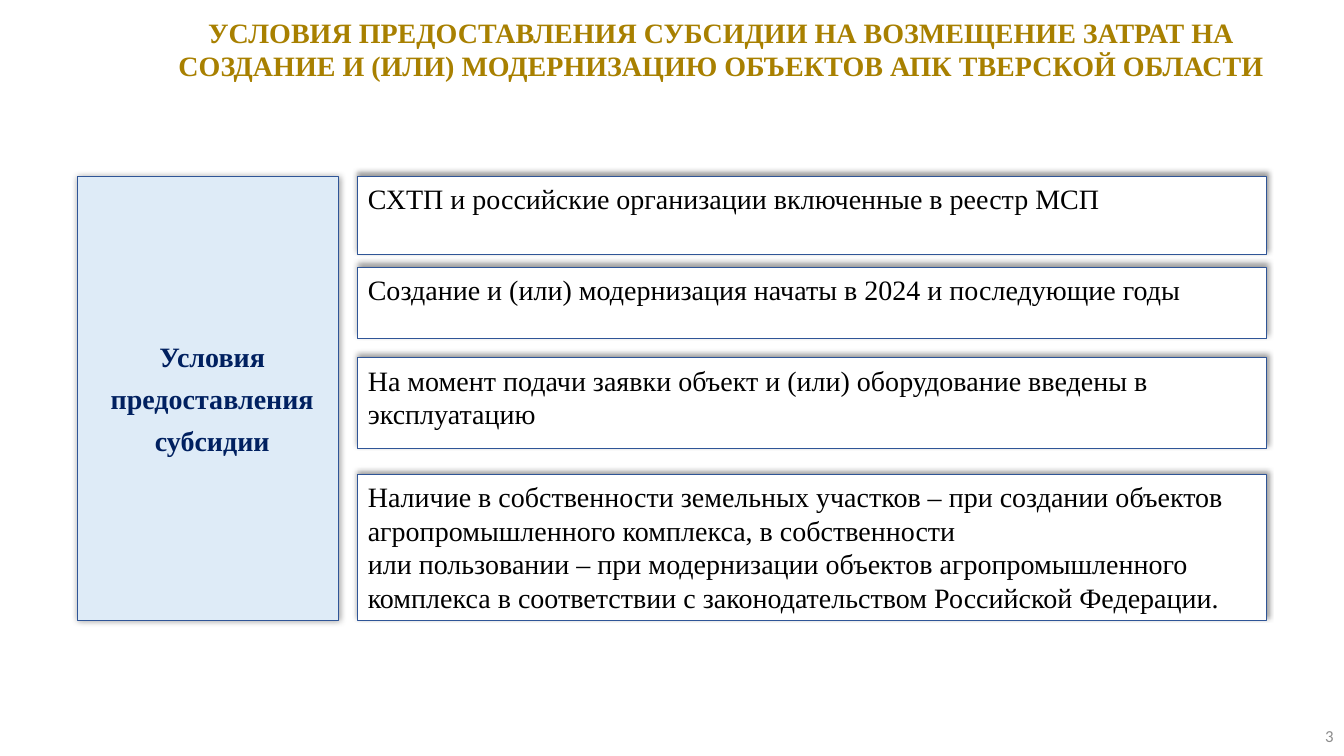
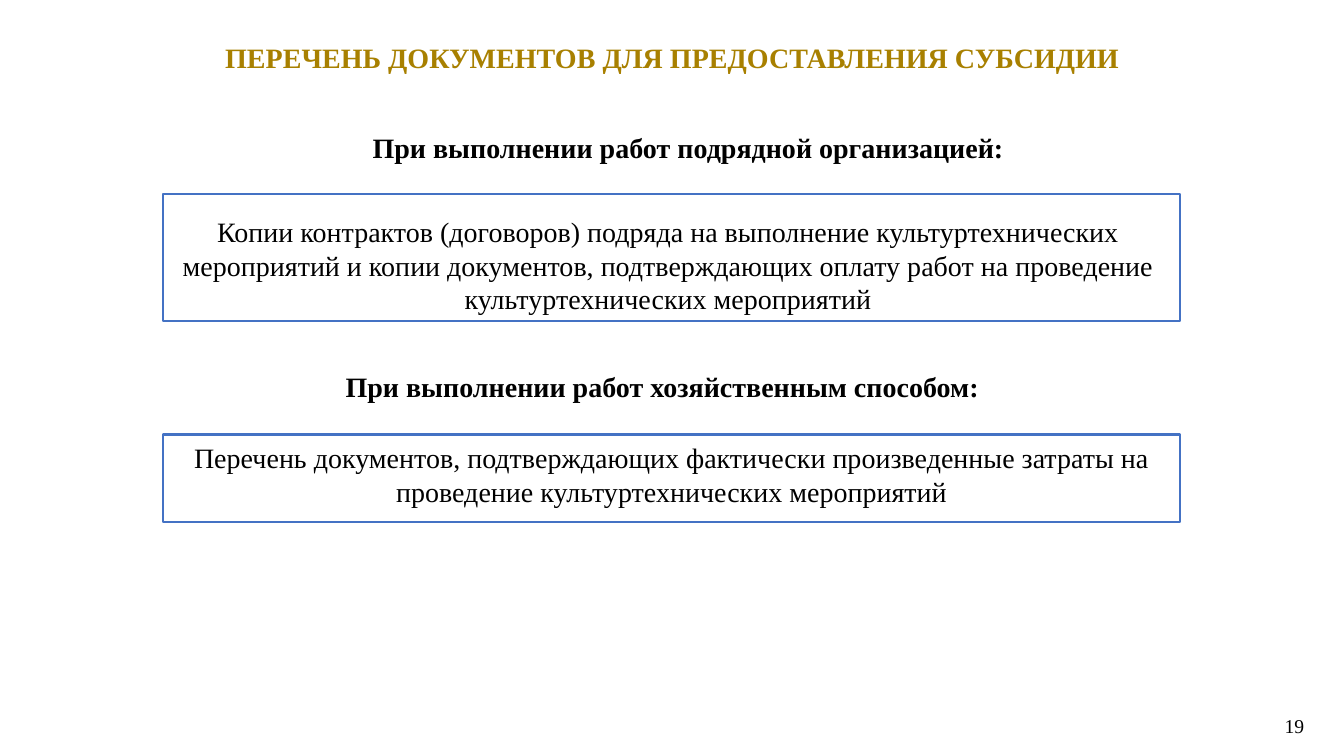
from lxml.etree import SubElement
from pptx import Presentation
from pptx.dml.color import RGBColor
from pptx.enum.shapes import MSO_SHAPE
from pptx.enum.text import MSO_ANCHOR, PP_ALIGN
from pptx.oxml.ns import qn
from pptx.util import Cm, Pt

GOLD = RGBColor(0xA8, 0x80, 0x00)
NAVY = RGBColor(0x00, 0x20, 0x60)
BLUE = RGBColor(0x44, 0x72, 0xC4)
DARK_BLUE = RGBColor(0x2F, 0x55, 0x97)
PALE_BLUE = RGBColor(0xDE, 0xEB, 0xF7)
GREY = RGBColor(0x8C, 0x8C, 0x8C)
WHITE = RGBColor(0xFF, 0xFF, 0xFF)
BLACK = RGBColor(0, 0, 0)

SERIF, SANS = "Times New Roman", "Calibri"
INSETS = (0.25, 0.13, 0.25, 0.13)


class Deck:
    """Shared style and the slide being filled."""

    def __init__(self):
        self.prs = Presentation()
        self.prs.slide_width, self.prs.slide_height = Cm(33.87), Cm(19.05)
        self.s = None

    def new_slide(self):
        self.s = self.prs.slides.add_slide(self.prs.slide_layouts[6])

    def put_text(self, sp, lines, size=20, font=SERIF, color=BLACK, bold=False,
                 align=PP_ALIGN.LEFT, anchor=MSO_ANCHOR.TOP, after=0, insets=INSETS):
        tf = sp.text_frame
        tf.word_wrap = True
        tf.vertical_anchor = anchor
        (tf.margin_left, tf.margin_top,
         tf.margin_right, tf.margin_bottom) = (Cm(v) for v in insets)
        for i, line in enumerate(lines):
            p = tf.add_paragraph() if i else tf.paragraphs[0]
            p.alignment = align
            p.space_after = Pt(after)
            r = p.add_run()
            r.text = line
            r.font.name, r.font.size, r.font.bold = font, Pt(size), bold
            r.font.color.rgb = color

    def text(self, at, line, **style):
        sp = self.s.shapes.add_textbox(*(Cm(v) for v in at))
        self.put_text(sp, [line], **style)

    def title(self, at, line):
        self.text(at, line, color=GOLD, bold=True, align=PP_ALIGN.CENTER,
                  anchor=MSO_ANCHOR.MIDDLE)

    def number(self, at, line, **style):
        self.text(at, line, align=PP_ALIGN.RIGHT, anchor=MSO_ANCHOR.MIDDLE, **style)

    def shape(self, kind, at, line, width, fill=None):
        sp = self.s.shapes.add_shape(kind, *(Cm(v) for v in at))
        if fill is None:
            sp.fill.background()
        else:
            sp.fill.solid()
            sp.fill.fore_color.rgb = fill
        sp.line.color.rgb = line
        sp.line.width = Pt(width)
        sp.shadow.inherit = False
        return sp

    def card(self, at, lines, fill=WHITE, width=0, blur=4, dist=3, **style):
        sp = self.shape(MSO_SHAPE.ROUNDED_RECTANGLE, at, DARK_BLUE, width, fill)
        sp.adjustments[0] = 0
        # Soft shadow, cast upwards
        effects = sp._element.spPr.find(qn("a:effectLst"))
        shadow = SubElement(effects, qn("a:outerShdw"), blurRad=str(Pt(blur)),
                            dist=str(Pt(dist)), dir="16200000", rotWithShape="0")
        tint = SubElement(shadow, qn("a:srgbClr"), val=str(BLACK))
        SubElement(tint, qn("a:alpha"), val="40000")
        self.put_text(sp, lines, **style)

    def frame(self, at, line, insets):
        sp = self.shape(MSO_SHAPE.RECTANGLE, at, BLUE, 1.5)
        self.put_text(sp, [line], align=PP_ALIGN.CENTER, insets=insets)


def conditions(d):
    d.new_slide()
    d.title((3.35, 0, 29.64, 2.46),
            "УСЛОВИЯ ПРЕДОСТАВЛЕНИЯ СУБСИДИИ НА ВОЗМЕЩЕНИЕ ЗАТРАТ НА "
            "СОЗДАНИЕ И (ИЛИ) МОДЕРНИЗАЦИЮ ОБЪЕКТОВ АПК ТВЕРСКОЙ ОБЛАСТИ")

    # Side panel
    d.card((1.96, 4.45, 6.58, 11.18), ["Условия", "предоставления", "субсидии"],
           fill=PALE_BLUE, width=0.5, blur=5, dist=0, color=NAVY, bold=True,
           align=PP_ALIGN.CENTER, anchor=MSO_ANCHOR.MIDDLE, after=6,
           insets=(0.45, 0.13, 0.25, 0.13))

    # Conditions: top, height, paragraphs
    for top, height, lines in (
        (4.45, 1.96, ["СХТП и российские организации включенные в реестр МСП"]),
        (6.73, 1.8, ["Создание и (или) модернизация начаты в 2024 и последующие годы"]),
        (9.02, 2.29, ["На момент подачи заявки объект и (или) оборудование "
                      "введены в эксплуатацию"]),
        (11.96, 3.68, ["Наличие в собственности земельных участков – при создании "
                       "объектов агропромышленного комплекса, в собственности",
                       "или пользовании – при модернизации объектов "
                       "агропромышленного комплекса в соответствии с "
                       "законодательством Российской Федерации."]),
    ):
        d.card((9.02, top, 22.91, height), lines)
    d.number((26.24, 18.03, 7.62, 1.02), "3", size=12, font=SANS, color=GREY)


def documents(d):
    d.new_slide()
    d.title((4.62, 0.89, 24.64, 1.12),
            "ПЕРЕЧЕНЬ ДОКУМЕНТОВ ДЛЯ ПРЕДОСТАВЛЕНИЯ СУБСИДИИ")

    # Headings, each with its framed list of documents
    for x, y, heading, top, height, body, insets in (
        (9.14, 3.15, "При выполнении работ подрядной организацией:", 4.88, 3.2,
         "Копии контрактов (договоров) подряда на выполнение культуртехнических "
         "мероприятий и копии документов, подтверждающих оплату работ на "
         "проведение культуртехнических мероприятий", (0.25, 0.53, 0.43, 0)),
        (8.46, 9.19, "При выполнении работ хозяйственным способом:", 10.95, 2.21,
         "Перечень документов, подтверждающих фактически произведенные затраты "
         "на проведение культуртехнических мероприятий", (0.43, 0.15, 0.43, 0)),
    ):
        d.text((x, y, 16.94, 1.12), heading, bold=True)
        d.frame((4.11, top, 25.63, height), body, insets)
    d.number((32, 17.53, 1.12, 1.5), "19", size=14)


def main():
    d = Deck()
    conditions(d)
    documents(d)
    d.prs.save("out.pptx")


if __name__ == "__main__":
    main()
